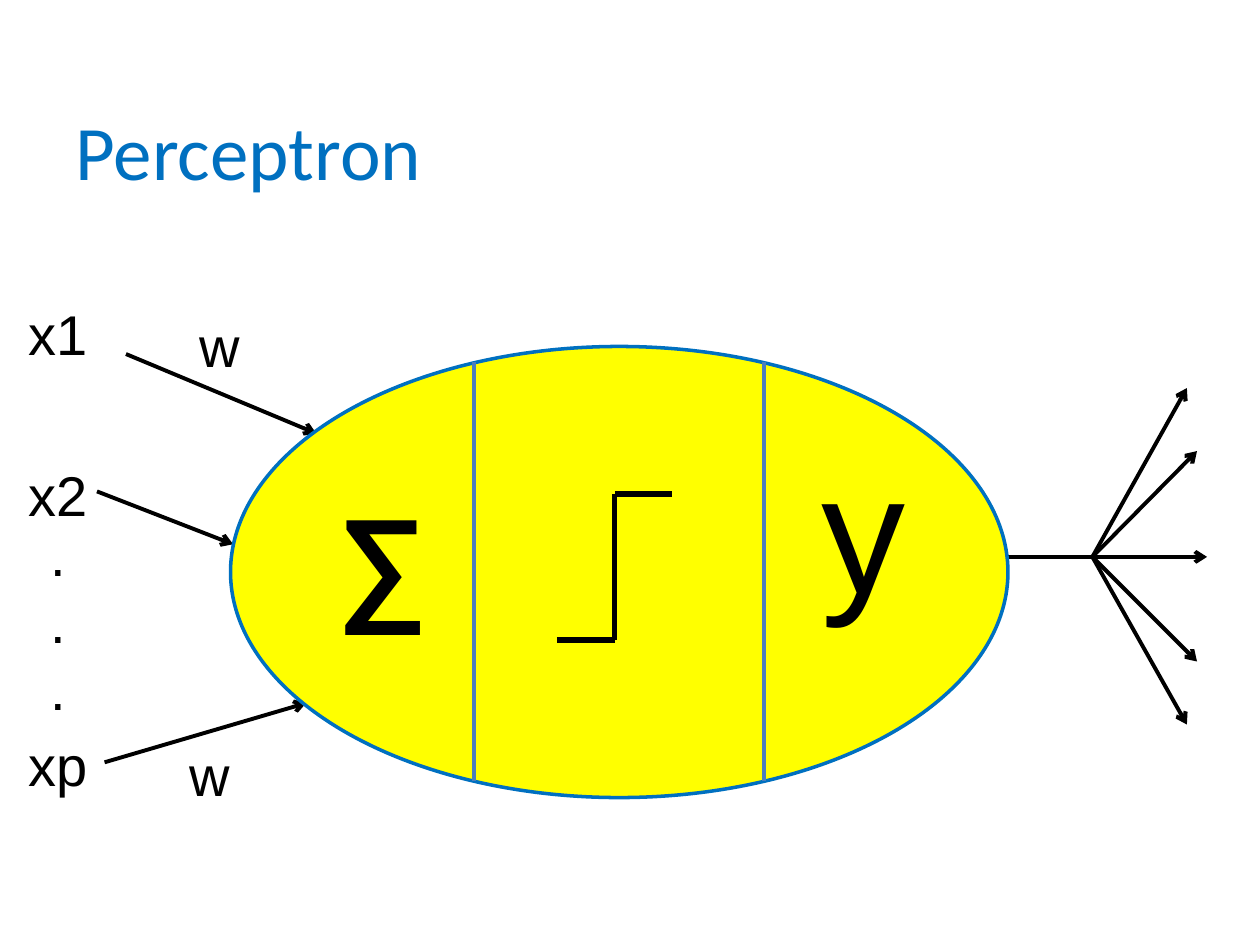
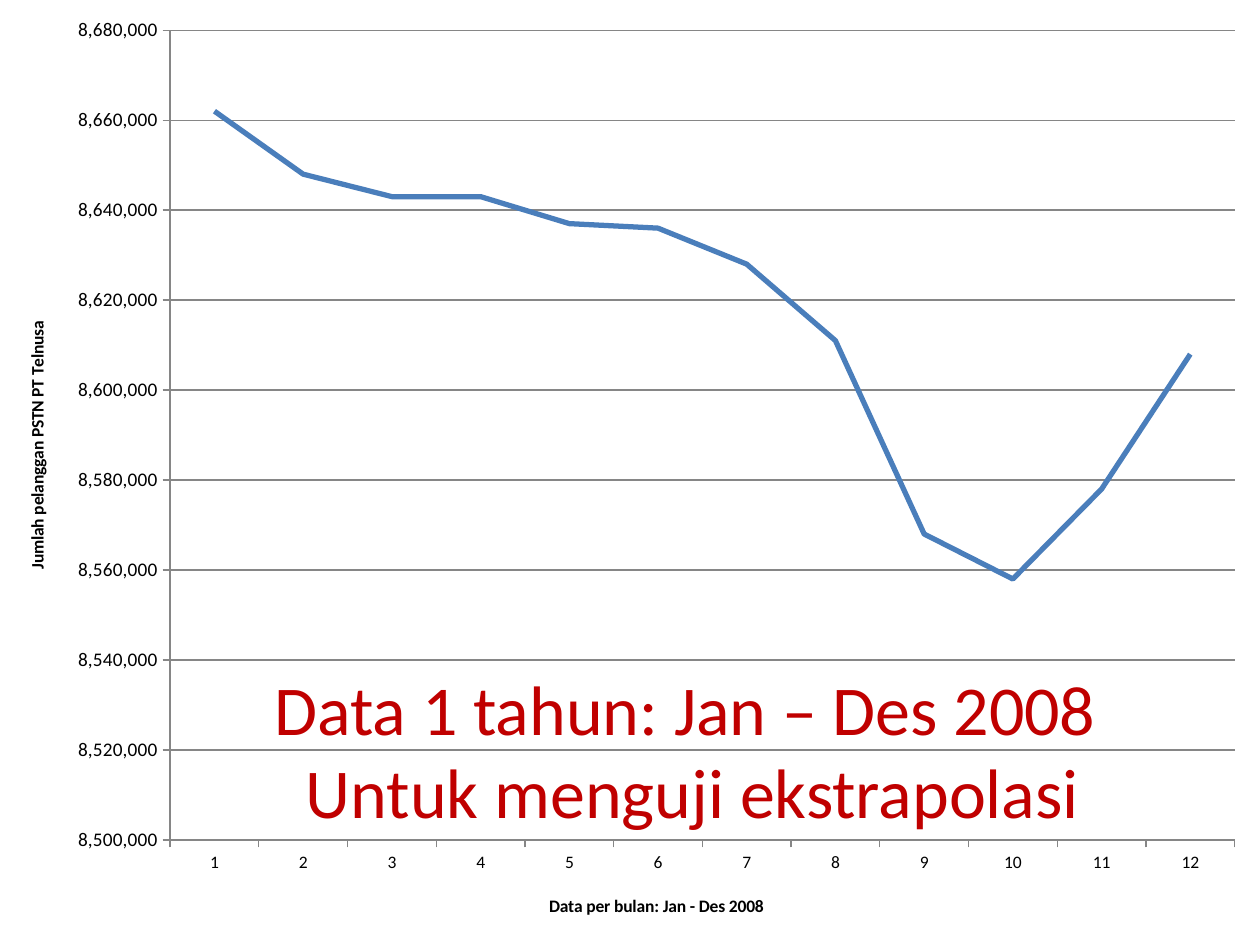
"""Build two slides: a perceptron diagram and a line chart of monthly subscribers."""
from lxml import etree
from pptx import Presentation
from pptx import util as u
from pptx.chart.data import CategoryChartData
from pptx.dml.color import RGBColor
from pptx.enum import chart as charts, shapes, text
from pptx.oxml import parse_xml
from pptx.oxml.ns import nsdecls, qn

COLOURS = {name: RGBColor.from_string(value) for name, value in {
    "blue": "0070C0", "black": "000000", "yellow": "FFFF00", "divider": "4B7EBC",
    "red": "C00000", "series": "4A7EBB", "axis": "868686"}.items()}


def write(holder, words, place, size, font="Arial", colour="black",
          align=text.PP_ALIGN.CENTER, bold=False, wrap=True):
    box = holder.add_textbox(*[u.Inches(length) for length in place])
    frame = box.text_frame
    frame.word_wrap = wrap
    frame.auto_size = text.MSO_AUTO_SIZE.SHAPE_TO_FIT_TEXT
    frame.text = words
    for para in frame.paragraphs:
        para.alignment = align
        for span in para.runs:
            span.font.size = u.Pt(size)
            span.font.name = font
            span.font.bold = bold
            span.font.color.rgb = COLOURS[colour]


def draw_line(holder, start, end, colour="black", width=2.25, arrow=False):
    ends = [u.Inches(length) for length in (*start, *end)]
    line = holder.add_connector(shapes.MSO_CONNECTOR.STRAIGHT, *ends)
    line.line.color.rgb = COLOURS[colour]
    line.line.width = u.Pt(width)
    if arrow:
        etree.SubElement(line.line._get_or_add_ln(), qn("a:tailEnd"), type="arrow")
    etree.SubElement(line._element.spPr, qn("a:effectLst"))


deck = Presentation()
deck.slide_width = u.Inches(10)
deck.slide_height = u.Inches(7.5)

page = deck.slides.add_slide(deck.slide_layouts[5])
title = page.shapes.title
title.left, title.top, title.width, title.height = [
    u.Inches(length) for length in (0.5, 0.77, 9, 1.25)]
title.text_frame.text = "Perceptron"
title.text_frame.vertical_anchor = text.MSO_ANCHOR.TOP
para = title.text_frame.paragraphs[0]
para.alignment = text.PP_ALIGN.LEFT
para.runs[0].font.size = u.Pt(44)
para.runs[0].font.name = "Calibri"
para.runs[0].font.color.rgb = COLOURS["blue"]

input_arrows = [((1, 2.81), (2.51, 3.44)), ((0.77, 3.9), (1.85, 4.32)),
                ((0.83, 6.05), (2.43, 5.58))]
for start, end in input_arrows:
    draw_line(page.shapes, start, end, arrow=True)

for label, top in (("x1", 2.33), ("x2", 3.61), ("xp", 5.75)):
    write(page.shapes, label, (0, top, 0.92, 0.64), 32)
write(page.shapes, ".\n.\n.", (0, 4.08, 0.92, 1.72), 32)
for left, top in ((1.08, 2.42), (1, 5.83)):
    write(page.shapes, "w", (left, top, 1.33, 0.64), 32)

fork = (8.67, 4.42)
draw_line(page.shapes, (8, 4.42), (9.58, 4.42), arrow=True)
for tip in ((9.5, 3.58), (9.5, 5.25), (9.42, 3.08), (9.42, 5.75)):
    draw_line(page.shapes, fork, tip, arrow=True)

neuron = page.shapes.add_group_shape().shapes
body = neuron.add_shape(shapes.MSO_SHAPE.OVAL, *[
    u.Inches(length) for length in (1.83, 2.75, 6.17, 3.58)])
body.shadow.inherit = False
body.fill.solid()
body.fill.fore_color.rgb = COLOURS["yellow"]
body.line.color.rgb = COLOURS["blue"]
body.line.width = u.Pt(2)
for x in (3.76, 6.06):
    draw_line(neuron, (x, 2.87), (x, 6.2), "divider")
write(neuron, "∑", (2.58, 3.77, 0.86, 1.31), 72, align=text.PP_ALIGN.LEFT, bold=True)
step_corners = [(4.42, 5.08), (4.88, 5.08), (4.88, 3.92), (5.33, 3.92)]
for start, end in zip(step_corners, step_corners[1:]):
    draw_line(neuron, start, end, width=3)
write(neuron, "y", (6.42, 3.33, 0.86, 1.72), 96, align=text.PP_ALIGN.LEFT)

page = deck.slides.add_slide(deck.slide_layouts[6])
data = CategoryChartData(number_format="#,##0")
data.categories = [str(month) for month in range(1, 13)]
subscribers = [8662, 8648, 8643, 8643, 8637, 8636, 8628, 8611, 8568, 8558, 8578, 8608]
data.add_series("Series 1", [thousands * 1000 for thousands in subscribers])
chart = page.shapes.add_chart(charts.XL_CHART_TYPE.LINE, 0, 0, deck.slide_width,
                              deck.slide_height, data).chart
chart.has_legend = False
chart.has_title = False
chart.font.size = u.Pt(10)
chart.font.name = "Calibri"
chart.font.color.rgb = COLOURS["black"]
chart.plots[0].vary_by_categories = False
series = chart.plots[0].series[0]
series.smooth = False
series.marker.style = charts.XL_MARKER_STYLE.NONE
series.format.line.color.rgb = COLOURS["series"]
series.format.line.width = u.Pt(3)

axes = ((chart.category_axis, "Data per bulan: Jan - Des 2008", 10),
        (chart.value_axis, "Jumlah pelanggan PSTN PT Telnusa", 11))
for axis, words, size in axes:
    axis.major_tick_mark = charts.XL_TICK_MARK.OUTSIDE
    axis.minor_tick_mark = charts.XL_TICK_MARK.NONE
    axis.format.line.color.rgb = COLOURS["axis"]
    axis.tick_labels.font.size = u.Pt(size)
    axis.axis_title.text_frame.text = words
    span = axis.axis_title.text_frame.paragraphs[0].runs[0]
    span.font.size = u.Pt(10)
    span.font.bold = True
    span.font.name = "Calibri"
    span.font.color.rgb = COLOURS["black"]
value_axis = chart.value_axis
value_axis.minimum_scale, value_axis.maximum_scale = 8500000, 8680000
value_axis.major_unit = 20000
value_axis.has_major_gridlines = True
value_axis.major_gridlines.format.line.color.rgb = COLOURS["axis"]
value_axis.tick_labels.number_format = "#,##0"
value_axis.tick_labels.number_format_is_linked = False
title_body = value_axis.axis_title.text_frame._txBody.find(qn("a:bodyPr"))
title_body.set("rot", "-5400000")
title_body.set("vert", "horz")

plot_area = chart._chartSpace.chart.plotArea
for layout in plot_area.findall(qn("c:layout")):
    plot_area.remove(layout)
plot_area.insert(0, parse_xml(
    f'<c:layout {nsdecls("c")}><c:manualLayout><c:layoutTarget val="inner"/>'
    '<c:xMode val="edge"/><c:yMode val="edge"/><c:x val="0.135"/><c:y val="0.032"/>'
    '<c:w val="0.845"/><c:h val="0.857"/></c:manualLayout></c:layout>'))

captions = (("Untuk menguji ekstrapolasi", (2.33, 5.89, 6.4, 0.77)),
            ("Data 1 tahun: Jan – Des 2008", (2.08, 5.23, 6.78, 0.77)))
for words, place in captions:
    write(page.shapes, words, place, 40, "Calibri", "red", text.PP_ALIGN.LEFT, wrap=False)

deck.save("out.pptx")
